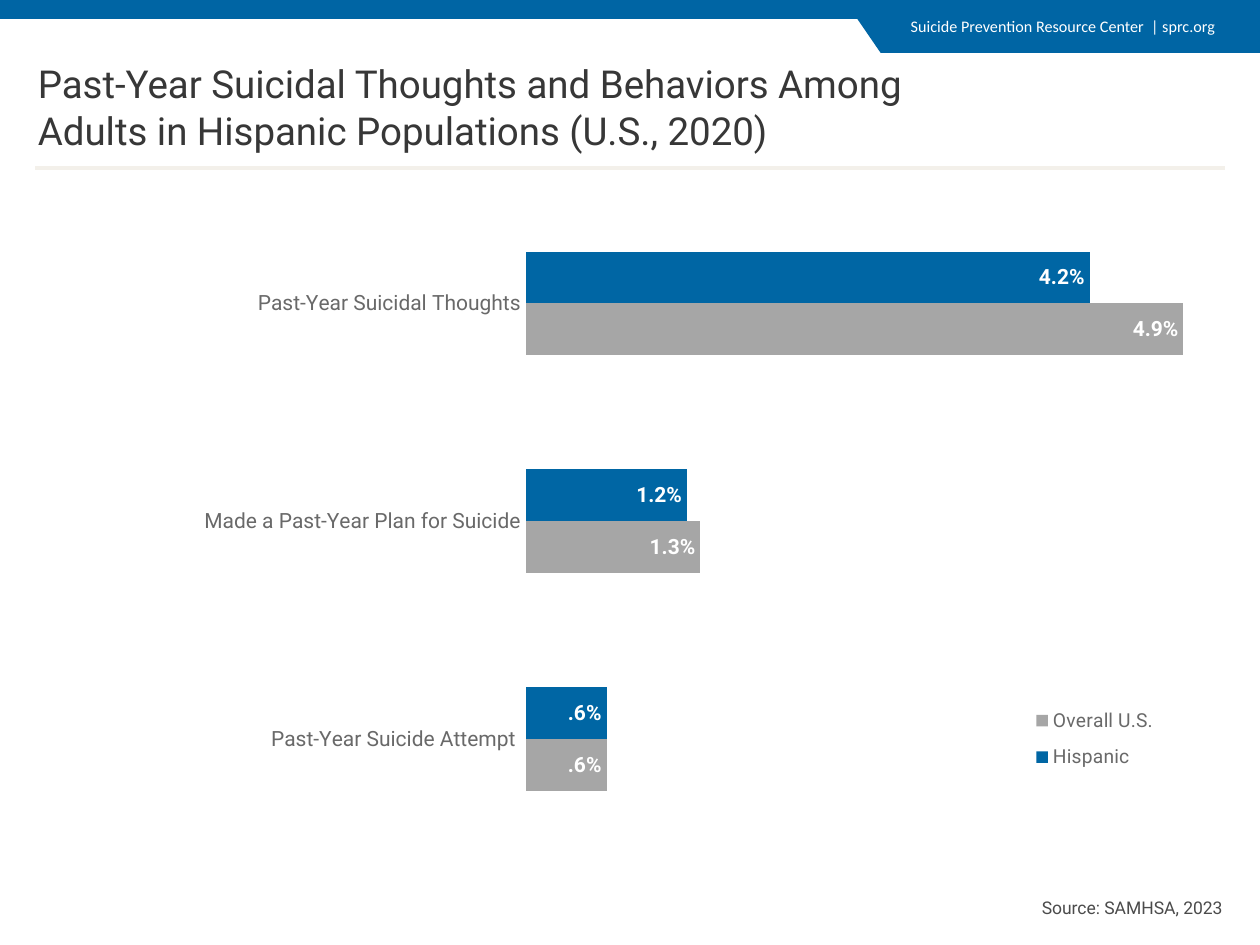
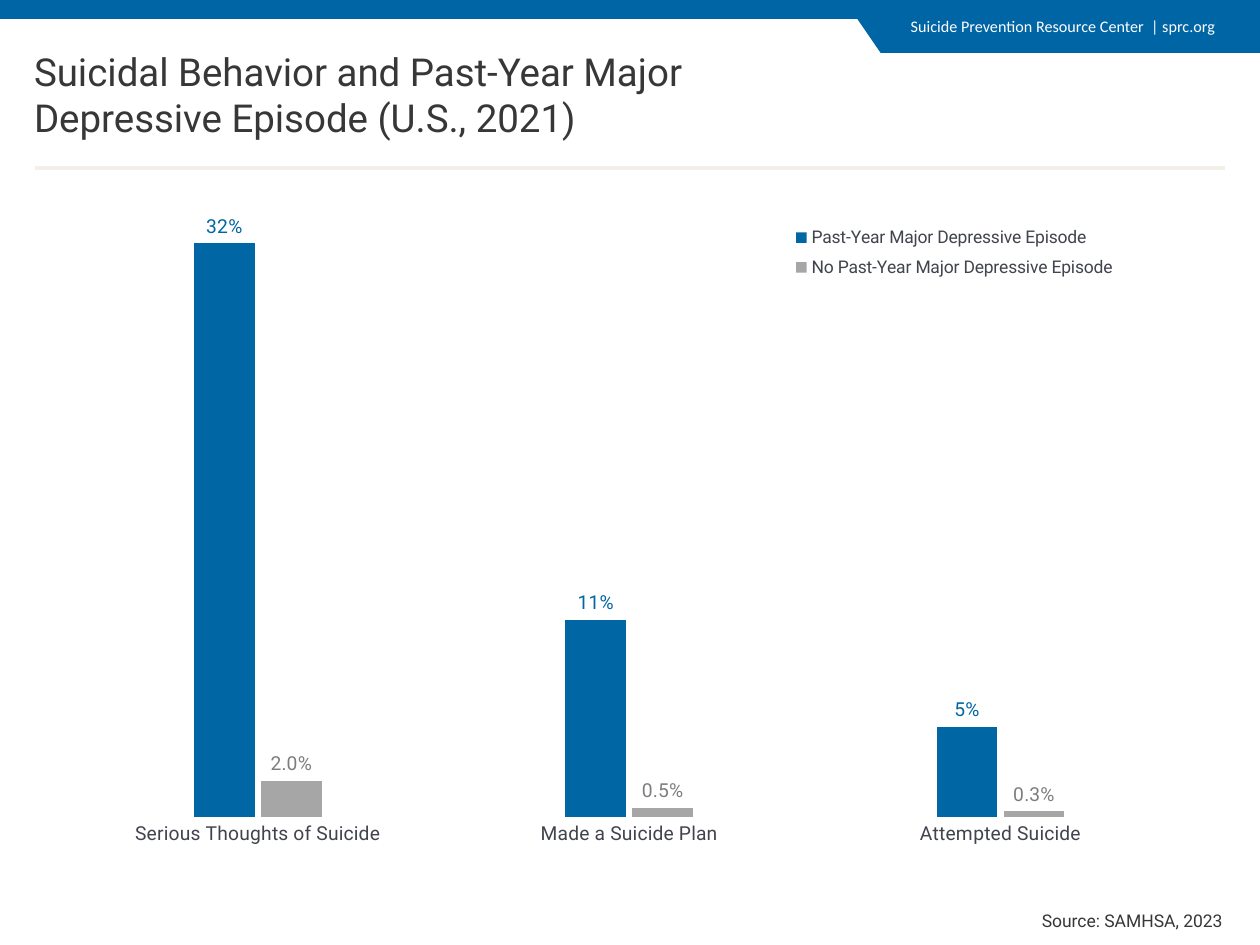
import pptx
import pptx.chart.data
import pptx.dml.color
import pptx.enum.chart
import pptx.enum.shapes
import pptx.enum.text
import pptx.util
from lxml import etree
from pptx.oxml.ns import qn

Inches = pptx.util.Inches
Pt = pptx.util.Pt
chart_enum = pptx.enum.chart

COLORS = {
    "band": "0065A4",
    "blue": "0066A4",
    "gray": "A6A6A6",
    "rule": "F3F0EA",
    "title": "373737",
    "source": "4B4B4B",
    "bar_text": "696969",
    "column_text": "41444D",
    "gray_label": "7D7D7D",
    "white": "FFFFFF",
}
FONT = "Roboto"


def rgb(color):
    return pptx.dml.color.RGBColor.from_string(COLORS[color])


def style_font(font, size, color, name=FONT, bold=False):
    font.size = Pt(size)
    font.name = name
    font.bold = bold
    font.color.rgb = rgb(color)


def fill_solid(shape, color):
    shape.fill.solid()
    shape.fill.fore_color.rgb = rgb(color)
    shape.line.fill.background()
    shape.shadow.inherit = False


def add_text(slide, box, text, size, color, name=FONT, align=pptx.enum.text.PP_ALIGN.LEFT):
    frame = slide.shapes.add_textbox(*map(Inches, box)).text_frame
    frame.word_wrap = True
    paragraph = frame.paragraphs[0]
    paragraph.alignment = align
    run = paragraph.add_run()
    run.text = text
    style_font(run.font, size, color, name)


def add_header(slide, box):
    left, top, width, height = box
    right, bottom = left + width, top + height
    band = slide.shapes.add_shape(
        pptx.enum.shapes.MSO_SHAPE.RECTANGLE, *map(Inches, (left, top, width, 0.15)))
    fill_solid(band, "band")
    tab_top = top + 0.1
    outline = slide.shapes.build_freeform(Inches(right), Inches(tab_top))
    corners = [(right, bottom), (right - 3.01, bottom), (right - 3.23, tab_top)]
    outline.add_line_segments([(Inches(x), Inches(y)) for x, y in corners])
    fill_solid(outline.convert_to_shape(), "band")
    add_text(slide, (right - 2.87, top + 0.08, 2.87, 0.3),
             "Suicide Prevention Resource Center  | sprc.org", 9.2, "white", "Calibri")


def add_title(slide, box, lines):
    title = slide.shapes.title
    title.left, title.top, title.width, title.height = map(Inches, box)
    frame = title.text_frame
    frame.word_wrap = True
    frame.auto_size = pptx.enum.text.MSO_AUTO_SIZE.NONE
    frame.vertical_anchor = pptx.enum.text.MSO_ANCHOR.TOP
    paragraph = frame.paragraphs[0]
    paragraph.alignment = pptx.enum.text.PP_ALIGN.LEFT
    for number, line in enumerate(lines):
        if number:
            paragraph.add_line_break()
        run = paragraph.add_run()
        run.text = line
        style_font(run.font, 22, "title")


def add_rule(slide, left, top, width):
    rule = slide.shapes.add_connector(
        pptx.enum.shapes.MSO_CONNECTOR.STRAIGHT,
        *map(Inches, (left, top, left + width, top)))
    rule.line.color.rgb = rgb("rule")
    rule.line.width = Pt(2.25)
    etree.SubElement(rule._element.spPr, qn("a:effectLst"))


def set_layout(parent, index, box, inner=False):
    for old in parent.findall(qn("c:layout")):
        parent.remove(old)
    layout = etree.Element(qn("c:layout"))
    parent.insert(index, layout)
    manual = etree.SubElement(layout, qn("c:manualLayout"))
    settings = [("layoutTarget", "inner")] if inner else []
    settings += [("xMode", "edge"), ("yMode", "edge"), *zip("xywh", box)]
    for tag, value in settings:
        etree.SubElement(manual, qn(f"c:{tag}")).set("val", str(value))


def add_rates_chart(slide, box, kind, categories, series, plot_box, legend_box,
                    value_range, gap, overlap, text_color, axis_size, legend_size):
    rates = pptx.chart.data.CategoryChartData()
    rates.categories = categories
    for entry in series:
        rates.add_series(entry["name"], entry["values"])
    chart = slide.shapes.add_chart(kind, *map(Inches, box), rates).chart
    chart.has_title = False
    style_font(chart.font, 10, "title", "Cabin")

    axis = chart.category_axis
    axis.major_tick_mark = chart_enum.XL_TICK_MARK.NONE
    axis.format.line.fill.background()
    axis.has_major_gridlines = False
    style_font(axis.tick_labels.font, axis_size, text_color)
    axis.reverse_order = kind == chart_enum.XL_CHART_TYPE.BAR_CLUSTERED
    scale = chart.value_axis
    scale.has_major_gridlines = False
    scale.minimum_scale, scale.maximum_scale = value_range
    scale.visible = False

    plot = chart.plots[0]
    plot.gap_width = gap
    plot.overlap = overlap
    plot.vary_by_categories = False
    for bars, entry in zip(plot.series, series):
        bars.format.fill.solid()
        bars.format.fill.fore_color.rgb = rgb(entry["color"])
        labels = bars.data_labels
        labels.show_value = True
        labels.position = entry["position"]
        labels.number_format = entry["format"]
        labels.number_format_is_linked = False
        style_font(labels.font, axis_size, entry["label_color"], bold=entry["bold"])

    chart.has_legend = True
    legend = chart.legend
    legend.position = chart_enum.XL_LEGEND_POSITION.BOTTOM
    legend.include_in_layout = False
    style_font(legend.font, legend_size, text_color)
    set_layout(legend._element, 1, legend_box)
    set_layout(chart._chartSpace.chart.plotArea, 0, plot_box, inner=True)


def rate_series(name, values, color, label_color, position, number_format, bold=False):
    return {"name": name, "values": values, "color": color, "label_color": label_color,
            "position": position, "format": number_format, "bold": bold}


def add_rates_slide(deck, title_box, title_lines, source_box, source_color, chart):
    slide = deck.slides.add_slide(deck.slide_layouts[5])
    add_header(slide, (0, 0, 10, 0.42))
    add_title(slide, title_box, title_lines)
    add_text(slide, source_box, "Source: SAMHSA, 2023", 10, source_color,
             align=pptx.enum.text.PP_ALIGN.RIGHT)
    add_rule(slide, 0.28, 1.33, 9.44)
    add_rates_chart(slide, **chart)


def main():
    deck = pptx.Presentation()
    deck.slide_width, deck.slide_height = Inches(10), Inches(7.5)
    inside = chart_enum.XL_LABEL_POSITION.INSIDE_END
    outside = chart_enum.XL_LABEL_POSITION.OUTSIDE_END

    add_rates_slide(
        deck, (0.2, 0.43, 7.45, 1.05),
        ["Past-Year Suicidal Thoughts and Behaviors Among",
         "Adults in Hispanic Populations (U.S., 2020)"],
        (7.97, 7.07, 1.83, 0.27), "source",
        dict(box=(0.5, 1.49, 9, 5.24),
             kind=chart_enum.XL_CHART_TYPE.BAR_CLUSTERED,
             categories=["Past-Year Suicidal Thoughts", "Made a Past-Year Plan for Suicide",
                         "Past-Year Suicide Attempt "],
             series=[rate_series("Hispanic", (0.042, 0.012, 0.006), "blue", "white",
                                 inside, "#.0%", True),
                     rate_series("Overall U.S.", (0.049, 0.013, 0.006), "gray", "white",
                                 inside, "#.0%", True)],
             plot_box=(0.29, 0.01, 0.71, 0.99), legend_box=(0.84, 0.77, 0.14, 0.13),
             value_range=(-0.01, 0.05), gap=222, overlap=0,
             text_color="bar_text", axis_size=12, legend_size=11))

    add_rates_slide(
        deck, (0.17, 0.33, 6.83, 0.99),
        ["Suicidal Behavior and Past-Year Major Depressive Episode (U.S., 2021)"],
        (6.5, 7.17, 3.3, 0.27), "title",
        dict(box=(0.39, 1.34, 9.21, 5.53),
             kind=chart_enum.XL_CHART_TYPE.COLUMN_CLUSTERED,
             categories=["Serious Thoughts of Suicide", "Made a Suicide Plan",
                         "Attempted Suicide"],
             series=[rate_series("Past-Year Major Depressive Episode", (0.32, 0.11, 0.05),
                                 "blue", "blue", outside, "0%"),
                     rate_series("No Past-Year Major Depressive Episode",
                                 (0.02, 0.005, 0.003), "gray", "gray_label",
                                 outside, "0.0%")],
             plot_box=(0.02, 0.03, 0.96, 0.9), legend_box=(0.63, 0.07, 0.3, 0.1),
             value_range=(0, 0.35), gap=400, overlap=-10,
             text_color="column_text", axis_size=11, legend_size=10))

    deck.save("out.pptx")


if __name__ == "__main__":
    main()
